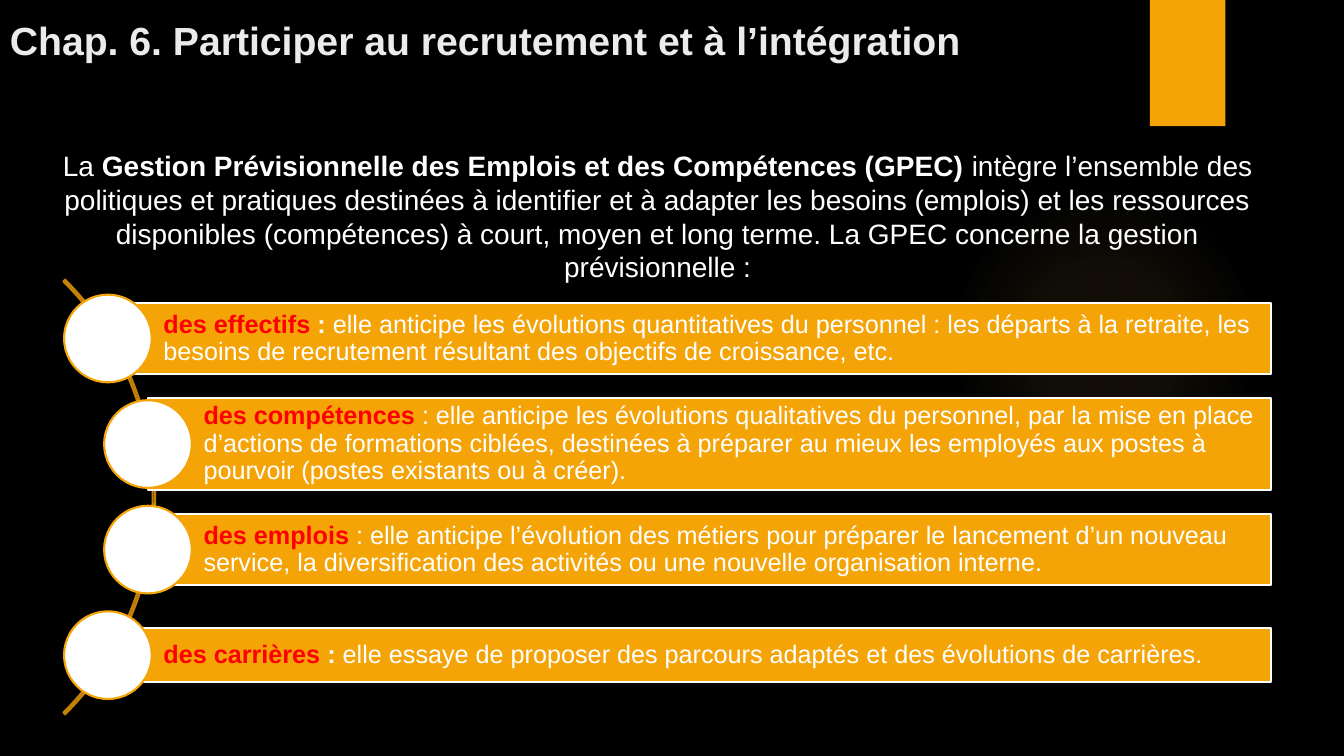
import lxml.etree
import pptx
import pptx.dml.color
import pptx.enum.shapes
import pptx.enum.text
import pptx.oxml.ns
import pptx.util
from pptx.util import Cm

SHAPE = pptx.enum.shapes.MSO_SHAPE
ANCHOR = pptx.enum.text.MSO_ANCHOR
ALIGN = pptx.enum.text.PP_ALIGN

ORANGE, WHITE, RED = "F5A408", "FFFFFF", "FF0000"

TITLE = "Chap. 6. Participer au recrutement et à l’intégration"
INTRO = [
    ("La ", WHITE, False),
    ("Gestion Prévisionnelle des Emplois et des Compétences (GPEC)", WHITE, True),
    (" intègre l’ensemble des politiques et pratiques destinées à identifier et à "
     "adapter les besoins (emplois) et les ressources disponibles (compétences) à "
     "court, moyen et long terme. La GPEC concerne la gestion prévisionnelle :",
     WHITE, False),
]
# Bar left, bar height, term, colon is bold, explanation
ITEMS = [
    (2.72, 1.78, "des effectifs ", True,
     " elle anticipe les évolutions quantitatives du personnel : les départs à la "
     "retraite, les besoins de recrutement résultant des objectifs de croissance, etc."),
    (3.73, 2.34, "des compétences ", False,
     " elle anticipe les évolutions qualitatives du personnel, par la mise en place "
     "d’actions de formations ciblées, destinées à préparer au mieux les employés aux "
     "postes à pourvoir (postes existants ou à créer)."),
    (3.73, 1.78, "des emplois ", False,
     " elle anticipe l’évolution des métiers pour préparer le lancement d’un nouveau "
     "service, la diversification des activités ou une nouvelle organisation interne."),
    (2.72, 1.35, "des carrières ", True,
     " elle essaye de proposer des parcours adaptés et des évolutions de carrières."),
]
BAR_RIGHT = 32.03
FIRST_CENTRE, PITCH = 8.53, 2.66
CIRCLE = 2.21


def rgb(value):
    return pptx.dml.color.RGBColor.from_string(value)


def add_shape(s, kind, left, top, width, height, fill=None, line=None):
    sp = s.shapes.add_shape(kind, Cm(left), Cm(top), Cm(width), Cm(height))
    sp.shadow.inherit = False
    if fill:
        sp.fill.solid()
        sp.fill.fore_color.rgb = rgb(fill)
    else:
        sp.fill.background()
    if line:
        sp.line.color.rgb = rgb(line)
        sp.line.width = pptx.util.Pt(1.5)
    else:
        sp.line.fill.background()
    return sp


def add_glow(s, left, top, size, color, stops):
    """Circle with a radial fade; stops are (position, opacity) in percent."""
    sp = add_shape(s, SHAPE.OVAL, left, top, size, size)
    ns = pptx.oxml.ns.nsdecls("a")
    stop_xml = "".join(
        f'<a:gs pos="{pos * 1000}"><a:srgbClr val="{color}">'
        f'<a:alpha val="{alpha * 1000}"/></a:srgbClr></a:gs>'
        for pos, alpha in stops)
    gradient = lxml.etree.fromstring(
        f'<a:gradFill {ns}><a:gsLst>{stop_xml}</a:gsLst><a:path path="circle">'
        '<a:fillToRect l="50000" t="50000" r="50000" b="50000"/></a:path></a:gradFill>')
    no_fill = sp.element.spPr.find(pptx.oxml.ns.qn("a:noFill"))
    sp.element.spPr.replace(no_fill, gradient)


def write_runs(tf, runs, size, align=ALIGN.LEFT, anchor=ANCHOR.TOP):
    """Fill the frame with one paragraph of (text, colour, bold) runs."""
    tf.word_wrap = True
    tf.vertical_anchor = anchor
    p = tf.paragraphs[0]
    p.alignment = align
    for text, color, bold in runs:
        r = p.add_run()
        r.text = text
        r.font.name = "Arial"
        r.font.size = pptx.util.Pt(size)
        r.font.bold = bold
        r.font.color.rgb = rgb(color)
    return p


def add_text(s, left, top, width, height, runs, size, **layout):
    box = s.shapes.add_textbox(Cm(left), Cm(top), Cm(width), Cm(height))
    write_runs(box.text_frame, runs, size, **layout)


def add_item(s, centre, left, height, term, bold_colon, explanation):
    bar = add_shape(s, SHAPE.RECTANGLE, left, centre - height / 2,
                    BAR_RIGHT - left, height, ORANGE, WHITE)
    tf = bar.text_frame
    tf.margin_left = Cm(1.4)
    tf.margin_right = tf.margin_top = tf.margin_bottom = Cm(0.13)
    runs = [(term, RED, True), (":", WHITE, bold_colon), (explanation, WHITE, False)]
    p = write_runs(tf, runs, 18, anchor=ANCHOR.MIDDLE)
    p.line_spacing = 0.9
    add_shape(s, SHAPE.OVAL, left - CIRCLE / 2, centre - CIRCLE / 2,
              CIRCLE, CIRCLE, WHITE, ORANGE)


def main():
    prs = pptx.Presentation()
    prs.slide_width, prs.slide_height = Cm(33.87), Cm(19.05)
    s = prs.slides.add_slide(prs.slide_layouts[6])
    s.background.fill.solid()
    s.background.fill.fore_color.rgb = rgb("000000")

    add_glow(s, 23.9, 4.65, 7.82, "FAC96A", [(0, 7), (36, 6), (69, 0)])
    add_shape(s, SHAPE.RECTANGLE, 28.98, 0, 1.9, 3.18, ORANGE)
    add_text(s, 0, 0, 28.52, 1.73, [(TITLE, "EBEBEB", True)], 28, anchor=ANCHOR.BOTTOM)
    add_text(s, 0.94, 3.63, 31.27, 3.68, INTRO, 20, align=ALIGN.CENTER)

    arc = add_shape(s, SHAPE.BLOCK_ARC, -11.58, 4.78, 15.49, 15.49, line="C48306")
    for i, value in enumerate((189, 27, 0.004)):
        arc.adjustments[i] = value
    for i, item in enumerate(ITEMS):
        add_item(s, FIRST_CENTRE + i * PITCH, *item)

    prs.save("out.pptx")


if __name__ == "__main__":
    main()
